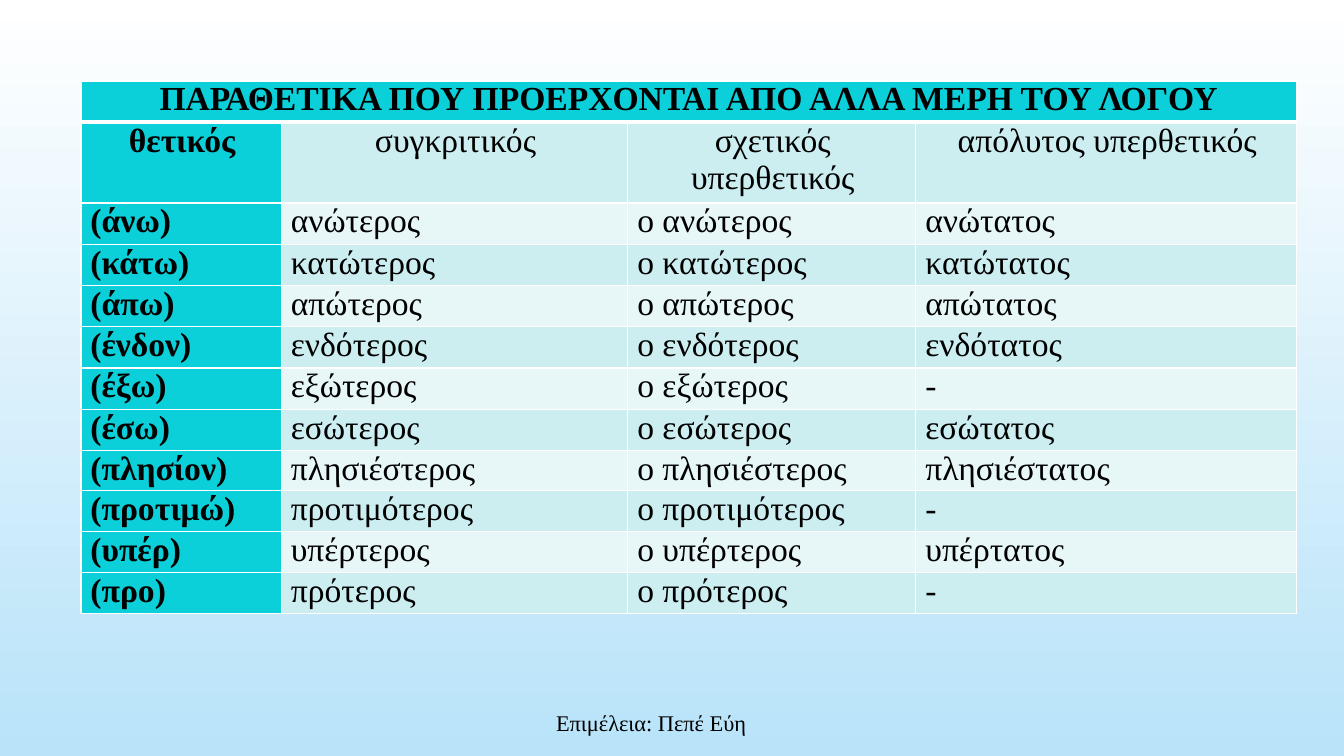
from lxml import etree
from pptx import Presentation
from pptx.dml.color import RGBColor
from pptx.enum.text import MSO_ANCHOR, PP_ALIGN
from pptx.oxml.ns import qn
from pptx.util import Cm, Pt

CENTER, LEFT = PP_ALIGN.CENTER, PP_ALIGN.LEFT
MIDDLE = MSO_ANCHOR.MIDDLE

TITLE = "ΠΑΡΑΘΕΤΙΚΑ ΠΟΥ ΠΡΟΕΡΧΟΝΤΑΙ ΑΠΟ ΑΛΛΑ ΜΕΡΗ ΤΟΥ ΛΟΓΟΥ"
HEADINGS = ("θετικός", "συγκριτικός", "σχετικός υπερθετικός", "απόλυτος υπερθετικός")
ADJECTIVES = [  # positive, comparative, absolute superlative
    ("(άνω)", "ανώτερος", "ανώτατος"),
    ("(κάτω)", "κατώτερος", "κατώτατος"),
    ("(άπω)", "απώτερος", "απώτατος"),
    ("(ένδον)", "ενδότερος", "ενδότατος"),
    ("(έξω)", "εξώτερος", "-"),
    ("(έσω)", "εσώτερος", "εσώτατος"),
    ("(πλησίον)", "πλησιέστερος", "πλησιέστατος"),
    ("(προτιμώ)", "προτιμότερος", "-"),
    ("(υπέρ)", "υπέρτερος", "υπέρτατος"),
    ("(προ)", "πρότερος", "-"),
]
CREDIT = "Επιμέλεια: Πεπέ Εύη"

FONT = "Times New Roman"
BLACK, WHITE, SKY = "000000", "FFFFFF", "B8E3F9"
TURQUOISE, BANDS = "0BD0D9", ("E7F7F8", "CCEEF1")
COLUMN_WIDTHS = (5.05, 8.73, 7.26, 9.6)
ROW_HEIGHT, HEADING_HEIGHT, TIGHT_HEIGHT = 1.04, 1.86, 0.93
TIGHT_ROWS = ("(πλησίον)", "(προτιμώ)")
CELL_MARGINS = {"margin_left": Cm(0.19), "margin_right": Cm(0.19),
                "margin_top": 0, "margin_bottom": 0}
THIN, THICK = 1, 3


def color(hex_code):
    return RGBColor.from_string(hex_code)


def write(paragraph, text, size, bold=False, align=LEFT):
    paragraph.alignment = align
    span = paragraph.add_run()
    span.text = text
    for name, value in {"name": FONT, "size": Pt(size), "bold": bold}.items():
        setattr(span.font, name, value)
    span.font.color.rgb = color(BLACK)


def add_borders(cell, top, bottom):
    properties = cell._tc.get_or_add_tcPr()
    for side, width in (("L", THIN), ("R", THIN), ("T", top), ("B", bottom)):
        line = etree.SubElement(properties, qn(f"a:ln{side}"), w=str(Pt(width)))
        fill = etree.SubElement(line, qn("a:solidFill"))
        etree.SubElement(fill, qn("a:srgbClr"), val=WHITE)


def row_height(row):
    if row[0] == HEADINGS[0]:
        return HEADING_HEIGHT
    return TIGHT_HEIGHT if row[0] in TIGHT_ROWS else ROW_HEIGHT


def add_adjective_table(page):
    rows = [(TITLE, "", "", ""), HEADINGS]
    rows += [(base, comparative, f"ο {comparative}", superlative)
             for base, comparative, superlative in ADJECTIVES]
    heights = [row_height(row) for row in rows]
    frame = page.shapes.add_table(len(rows), len(COLUMN_WIDTHS), Cm(2.04), Cm(2.04),
                                  Cm(sum(COLUMN_WIDTHS)), Cm(sum(heights)))
    table = frame.table
    table.first_row = table.horz_banding = False
    for column, width in zip(table.columns, COLUMN_WIDTHS):
        column.width = Cm(width)
    for r, row in enumerate(rows):
        table.rows[r].height = Cm(heights[r])
        for c, text in enumerate(row):
            cell = table.cell(r, c)
            for name, value in CELL_MARGINS.items():
                setattr(cell, name, value)
            add_borders(cell, THICK if r == 1 else THIN, THICK if r == 0 else THIN)
            emphasized = r == 0 or c == 0
            cell.fill.solid()
            cell.fill.fore_color.rgb = color(TURQUOISE if emphasized else BANDS[r % 2])
            if text:
                paragraph = cell.text_frame.paragraphs[0]
                write(paragraph, text, 24, emphasized, CENTER if r < 2 else LEFT)
                if r > 0:
                    paragraph._p.get_or_add_pPr().set("marL", str(Cm(0.05)))
    table.cell(0, 0).merge(table.cell(0, len(COLUMN_WIDTHS) - 1))


def add_credit(page):
    box = page.shapes.add_textbox(Cm(7.14), Cm(17.7), Cm(18.54), Cm(1.02))
    box.text_frame.word_wrap = True
    box.text_frame.vertical_anchor = MIDDLE
    write(box.text_frame.paragraphs[0], CREDIT, 16, align=CENTER)


def paint_background(page):
    fill = page.background.fill
    fill.gradient()
    fill.gradient_angle = 270
    for stop, position, hex_code in zip(fill.gradient_stops, (0, 1), (WHITE, SKY)):
        stop.position = position
        stop.color.rgb = color(hex_code)


def main():
    deck = Presentation()
    deck.slide_width, deck.slide_height = Cm(33.87), Cm(19.05)
    page = deck.slides.add_slide(deck.slide_layouts[6])
    paint_background(page)
    add_credit(page)
    add_adjective_table(page)
    deck.save("out.pptx")


if __name__ == "__main__":
    main()
